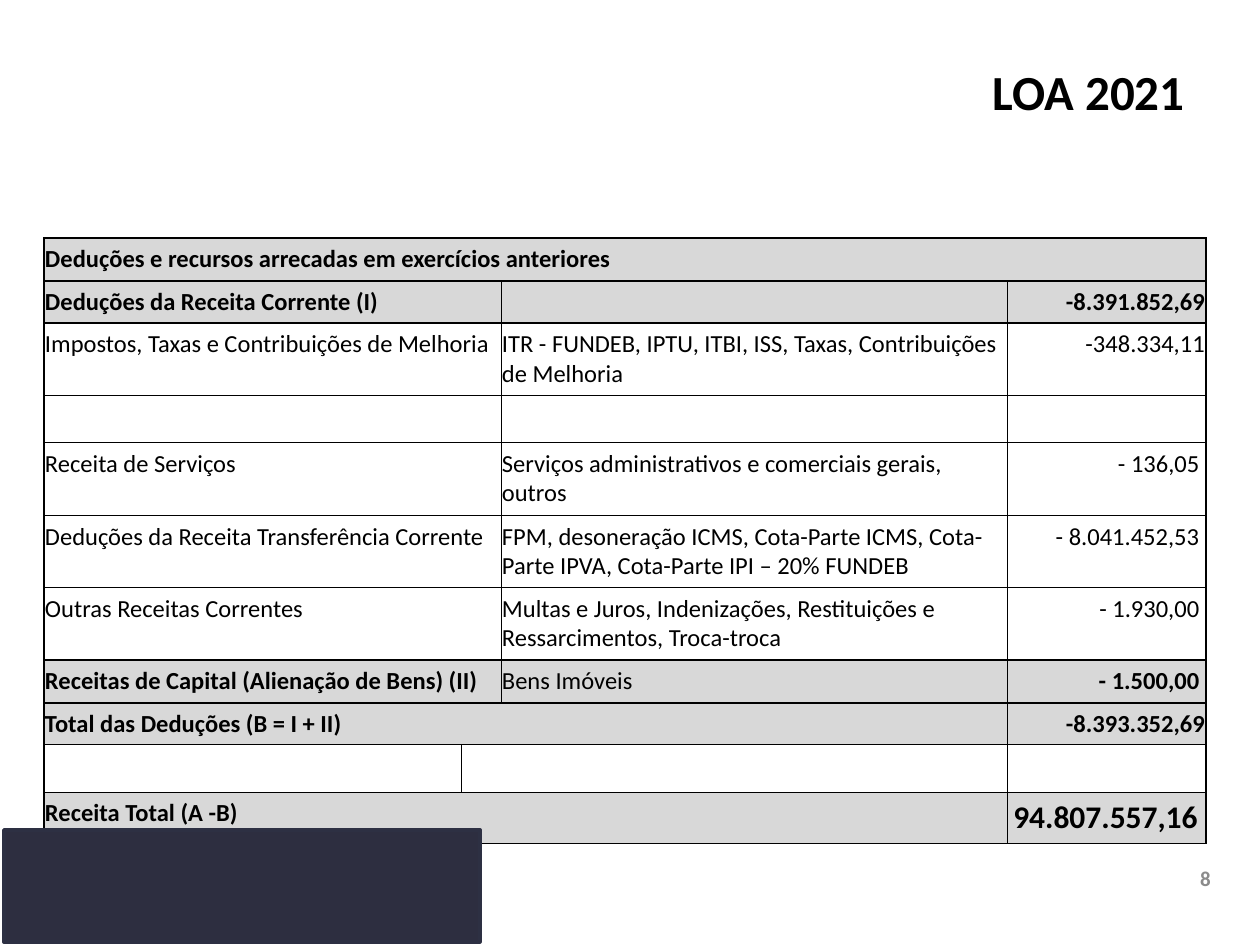
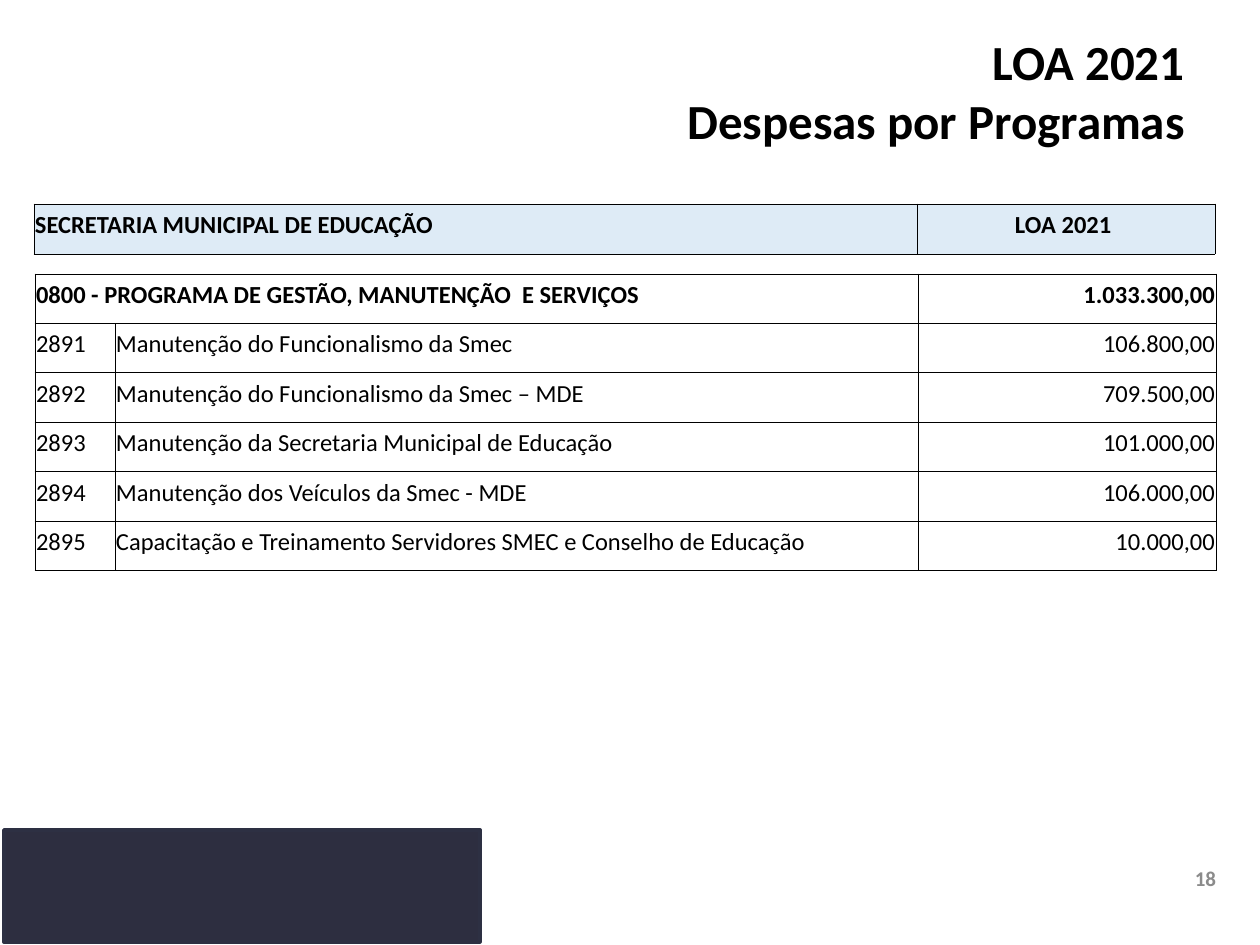
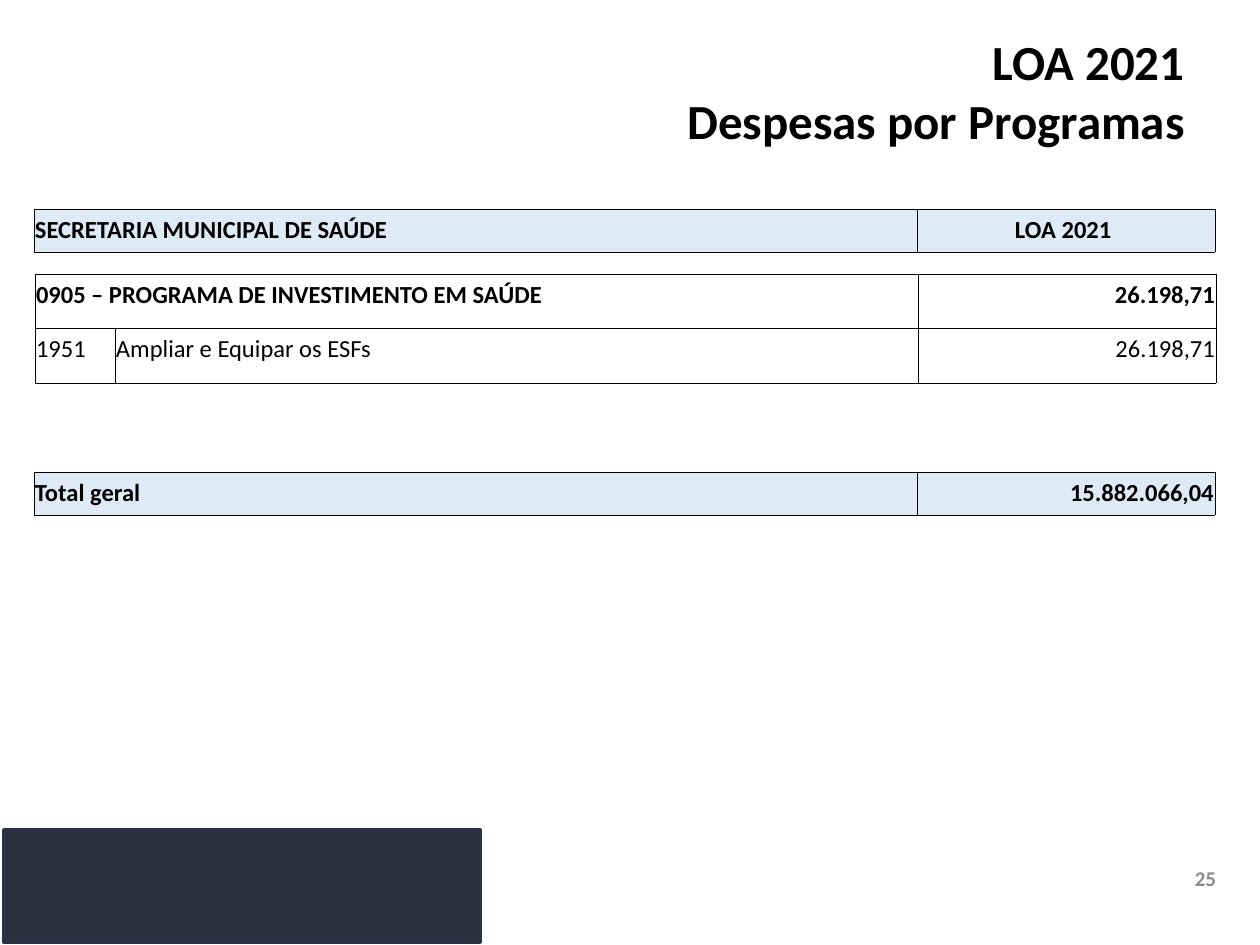
"""Builds three municipal budget slides with deduction and programme tables."""
import dataclasses

import pptx
import pptx.dml.color
import pptx.enum.shapes
import pptx.enum.text
import pptx.oxml
import pptx.oxml.ns
import pptx.util

ALIGN = pptx.enum.text.PP_ALIGN
MIDDLE = pptx.enum.text.MSO_ANCHOR.MIDDLE
EMU_PER_PX = 914400 / 126


@dataclasses.dataclass(frozen=True)
class Theme:
    font: str = "Calibri"
    ink: str = "000000"
    page_ink: str = "8B8B8B"
    band: str = "2D2E40"
    band_edge: str = "2D3043"
    subtotal: str = "D8D8D8"
    heading: str = "DEEBF6"
    title_size: int = 28
    grand_size: int = 18
    body_size: int = 14
    page_size: int = 12
    thin: float = 0.5
    thick: float = 0.96


THEME = Theme()


@dataclasses.dataclass(frozen=True)
class Cell:
    text: str = ""
    span: int = 1
    align: ALIGN = ALIGN.LEFT
    bold: bool = False
    fill: str = ""
    size: int = THEME.body_size


def px(length):
    return pptx.util.Emu(round(length * EMU_PER_PX))


def rgb(value):
    return pptx.dml.color.RGBColor.from_string(value)


class Deck:
    """Holds the theme and the current slide."""

    def __init__(self, theme):
        self.theme = theme
        self.presentation = pptx.Presentation()
        self.presentation.slide_width = px(1260)
        self.presentation.slide_height = px(945)
        self.slide = None

    def start(self, title, page):
        layout = self.presentation.slide_layouts[6]
        self.slide = self.presentation.slides.add_slide(layout)
        theme = self.theme
        self.text(title, 422, 26, 775, 129, ALIGN.RIGHT, theme.title_size, theme.ink)
        self.text([page], 1176, 849, 59, 59, ALIGN.CENTER, theme.page_size, theme.page_ink)

    def run(self, paragraph, text, size, color, bold):
        run = paragraph.add_run()
        run.text = text
        run.font.name = self.theme.font
        run.font.size = pptx.util.Pt(size)
        run.font.bold = bold
        run.font.color.rgb = rgb(color)

    def text(self, lines, left, top, width, height, align, size, color):
        box = self.slide.shapes.add_textbox(px(left), px(top), px(width), px(height))
        frame = box.text_frame
        frame.word_wrap = True
        frame.vertical_anchor = MIDDLE
        paragraph = frame.paragraphs[0]
        paragraph.alignment = align
        for number, line in enumerate(lines):
            if number:
                paragraph.add_line_break()
            self.run(paragraph, line, size, color, True)

    def band(self):
        band = self.slide.shapes.add_shape(
            pptx.enum.shapes.MSO_SHAPE.RECTANGLE, px(4), px(830), px(476), px(112))
        band.shadow.inherit = False
        band.fill.solid()
        band.fill.fore_color.rgb = rgb(self.theme.band)
        band.line.color.rgb = rgb(self.theme.band_edge)
        band.line.width = pptx.util.Pt(2)

    def borders(self, cell, weights):
        properties = cell._tc.get_or_add_tcPr()
        for side, weight in zip("LRTB", weights):
            properties.append(pptx.oxml.parse_xml(
                f'<a:ln{side} {pptx.oxml.ns.nsdecls("a")} w="{pptx.util.Pt(weight)}">'
                f'<a:solidFill><a:srgbClr val="{self.theme.ink}"/></a:solidFill>'
                f'</a:ln{side}>'))

    def fill_cell(self, cell, content, weights):
        self.borders(cell, weights)
        if content.fill:
            cell.fill.solid()
            cell.fill.fore_color.rgb = rgb(content.fill)
        else:
            cell.fill.background()
        cell.margin_left = cell.margin_right = px(1)
        cell.margin_top = cell.margin_bottom = px(6)

    def write_cell(self, cell, content):
        paragraph = cell.text_frame.paragraphs[0]
        paragraph.alignment = content.align
        if content.text:
            self.run(paragraph, content.text, content.size, self.theme.ink, content.bold)
        else:
            ending = paragraph._p.get_or_add_endParaRPr()
            ending.set("sz", str(content.size * 100))

    def table(self, left, top, widths, height, rows, shares=None, framed=False):
        shares = shares or [1] * len(rows)
        table = self.slide.shapes.add_table(
            len(rows), len(widths), px(left), px(top), px(sum(widths)), px(height)).table
        table.first_row = table.horz_banding = False
        for column, width in zip(table.columns, widths):
            column.width = px(width)
        for row, share in zip(table.rows, shares):
            row.height = px(height * share / sum(shares))

        def weight(heavy):
            return self.theme.thick if framed and heavy else self.theme.thin

        shaded = [True, *(bool(cells[0].fill) for cells in rows), True]
        for number, cells in enumerate(rows):
            above = weight(shaded[number] or shaded[number + 1])
            below = weight(shaded[number + 1] or shaded[number + 2])
            first = 0
            for content in cells:
                after = first + content.span
                weights = (weight(first == 0), weight(after == len(widths)), above, below)
                for position in range(first, after):
                    self.fill_cell(table.cell(number, position), content, weights)
                origin = table.cell(number, first)
                if content.span > 1:
                    origin.merge(table.cell(number, after - 1))
                self.write_cell(origin, content)
                first = after

    def heading(self, top, height, label, value, align):
        fill = self.theme.heading
        self.table(34, top, [883, 298], height, [[
            Cell(label, bold=True, fill=fill),
            Cell(value, align=align, bold=True, fill=fill)]])

    def programme(self, height, name, total, actions):
        rows = [[Cell(name, span=2, bold=True), Cell(total, align=ALIGN.RIGHT, bold=True)]]
        rows += [[Cell(code), Cell(action), Cell(amount, align=ALIGN.RIGHT)]
                 for code, action, amount in actions]
        self.table(35, 274, [80, 803, 298], height, rows)


def revenue(source, detail, amount):
    return [Cell(source, span=2), Cell(detail), Cell(amount, align=ALIGN.RIGHT)]


def subtotal(label, amount, detail=None, size=THEME.body_size):
    fill = THEME.subtotal
    total = Cell(amount, align=ALIGN.RIGHT, bold=True, fill=fill, size=size)
    if detail is None:
        return [Cell(label, span=3, bold=True, fill=fill), total]
    return [Cell(label, span=2, bold=True, fill=fill), Cell(detail, fill=fill), total]


def main():
    deck = Deck(THEME)

    deck.start(["LOA 2021"], "8")
    deductions = [
        [Cell("Deduções e recursos arrecadas em exercícios anteriores",
              span=4, bold=True, fill=THEME.subtotal)],
        subtotal("Deduções da Receita Corrente (I)", "-8.391.852,69", ""),
        revenue("Impostos, Taxas e Contribuições de Melhoria",
                "ITR - FUNDEB, IPTU, ITBI, ISS, Taxas, Contribuições de Melhoria",
                "-348.334,11"),
        revenue("", "", ""),
        revenue("Receita de Serviços",
                "Serviços administrativos e comerciais gerais, outros", "- 136,05 "),
        revenue("Deduções da Receita Transferência Corrente",
                "FPM, desoneração ICMS, Cota-Parte ICMS, Cota-Parte IPVA, "
                "Cota-Parte IPI – 20% FUNDEB", "- 8.041.452,53 "),
        revenue("Outras Receitas Correntes",
                "Multas e Juros, Indenizações, Restituições e Ressarcimentos, Troca-troca",
                "- 1.930,00 "),
        subtotal("Receitas de Capital (Alienação de Bens) (II)", "- 1.500,00 ",
                 "Bens Imóveis"),
        subtotal("Total das Deduções (B = I + II)", "-8.393.352,69"),
        [Cell(), Cell(span=2), Cell()],
        subtotal("Receita Total (A -B)", "94.807.557,16 ", size=THEME.grand_size),
    ]
    deck.table(44, 238, [417, 40, 506, 199], 606, deductions,
               shares=[43, 42, 72, 48, 73, 72, 72, 43, 42, 48, 51], framed=True)
    deck.band()

    programme_title = ["LOA 2021", "Despesas por Programas"]
    deck.start(programme_title, "18")
    deck.programme(297, "0800 - PROGRAMA DE GESTÃO, MANUTENÇÃO  E SERVIÇOS", "1.033.300,00", [
        ("2891", "Manutenção do Funcionalismo da Smec", "106.800,00"),
        ("2892", "Manutenção do Funcionalismo da Smec – MDE", "709.500,00"),
        ("2893", "Manutenção da Secretaria Municipal de Educação", "101.000,00"),
        ("2894", "Manutenção dos Veículos da Smec - MDE", "106.000,00"),
        ("2895", "Capacitação e Treinamento Servidores SMEC e Conselho de Educação",
         "10.000,00"),
    ])
    deck.heading(204, 50, "SECRETARIA MUNICIPAL DE EDUCAÇÃO", "LOA 2021 ", ALIGN.CENTER)
    deck.band()

    deck.start(programme_title, "25")
    deck.programme(109, "0905 – PROGRAMA DE INVESTIMENTO EM SAÚDE", "26.198,71", [
        ("1951", "Ampliar e Equipar os ESFs", "26.198,71"),
    ])
    deck.heading(209, 43, "SECRETARIA MUNICIPAL DE SAÚDE", "LOA 2021 ", ALIGN.CENTER)
    deck.heading(472, 43, "Total geral", "15.882.066,04", ALIGN.RIGHT)
    deck.band()

    deck.presentation.save("out.pptx")


if __name__ == "__main__":
    main()
